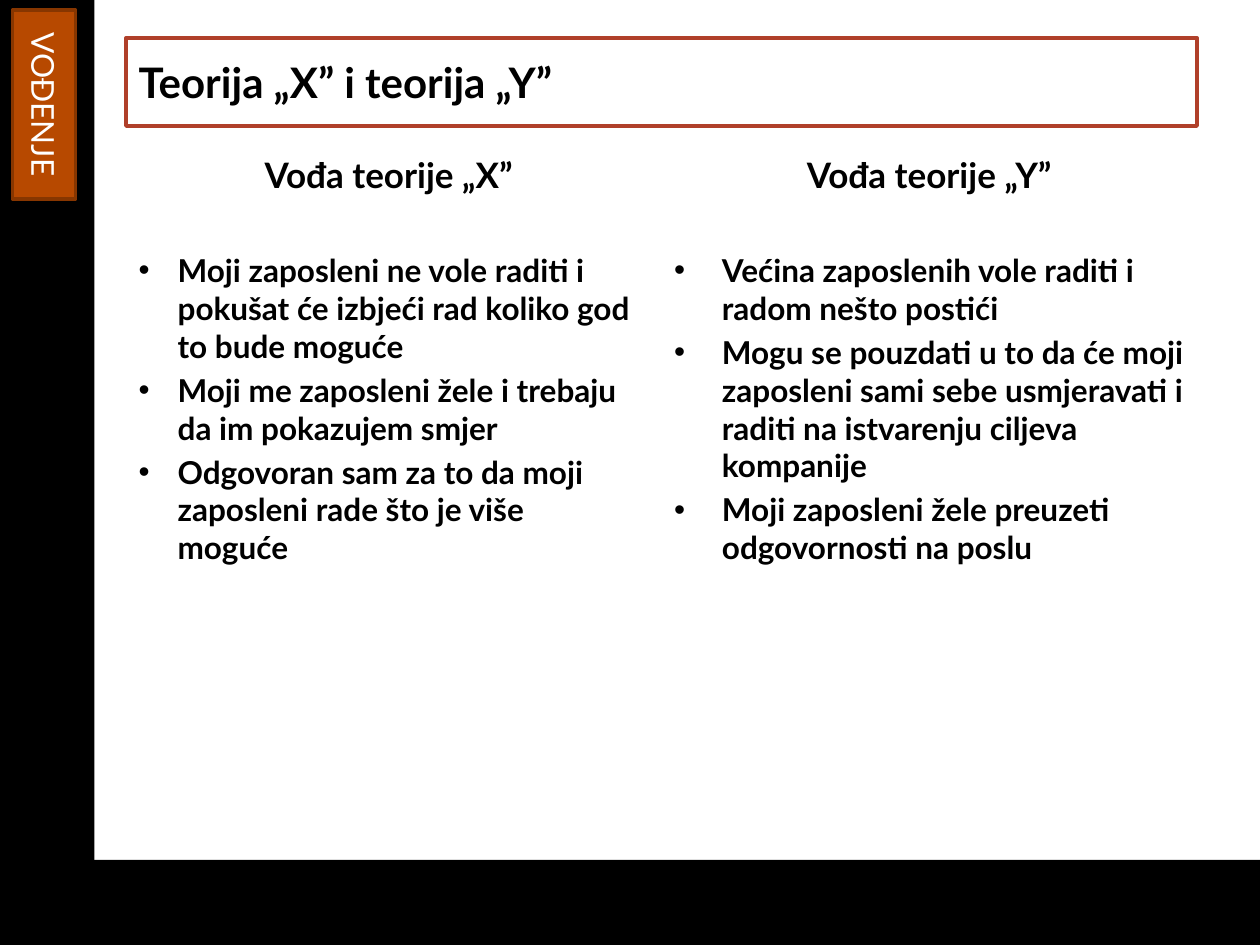
from dataclasses import dataclass
from pptx import Presentation, util as u
from pptx.dml.color import RGBColor as Rgb
from pptx.enum import shapes, text
from pptx.oxml.xmlchemy import OxmlElement


@dataclass(frozen=True)
class Theme:
    face: str = "Lato"
    ink: str = "000000"
    paper: str = "FFFFFF"
    edge: str = "B0402A"
    tab: str = "B74900"
    rim: str = "873600"
    title: int = 24
    head: int = 20
    body: int = 18


T = Theme()
W, H = 10, 7.5
SIDE, BASE = 0.075 * W, 0.91 * H
TOP, TALL = 0.156 * H, 0.66 * H
LEFT, RIGHT = 0.1 * W, 0.95 * W
MID = (LEFT + RIGHT) / 2

TITLE = "Teorija „X” i teorija „Y”"
TAB = "VOĐENJE"
COLS = [
    (LEFT, MID - 0.08, 0.31, "Vođa teorije „X”", [
        "Moji zaposleni ne vole raditi i pokušat će izbjeći rad koliko god to bude moguće",
        "Moji me zaposleni žele i trebaju da im pokazujem smjer",
        "Odgovoran sam za to da moji zaposleni rade što je više moguće",
    ]),
    (MID, RIGHT, 0.38, "Vođa teorije „Y”", [
        "Većina zaposlenih vole raditi i radom nešto postići",
        "Mogu se pouzdati u to da će moji zaposleni sami sebe usmjeravati i raditi na istvarenju ciljeva kompanije",
        "Moji zaposleni žele preuzeti odgovornosti na poslu",
    ]),
]
BARS = [(0, BASE, W, H - BASE), (0, 0, SIDE, BASE)]


def place(shape, *box):
    shape.left, shape.top, shape.width, shape.height = map(u.Inches, box)


def paint(shape, fill, line=None):
    shape.fill.solid()
    shape.fill.fore_color.rgb = Rgb.from_string(fill)
    if line:
        shape.line.color.rgb = Rgb.from_string(line)
        shape.line.width = u.Pt(2)
    else:
        shape.line.fill.background()


def style(para, size, color=T.ink, bold=True, align=text.PP_ALIGN.LEFT):
    para.alignment = align
    font = para.font
    font.name, font.size, font.bold = T.face, u.Pt(size), bold
    font.color.rgb = Rgb.from_string(color)


def mark(para, hang):
    props = para._p.get_or_add_pPr()
    props.set("marL", str(u.Inches(hang)))
    props.set("indent", str(-u.Inches(hang)))
    bullet = OxmlElement("a:buChar" if hang else "a:buNone")
    if hang:
        bullet.set("char", "•")
    props.append(bullet)


def block(slide, *box, fill, line=None):
    shape = slide.shapes.add_shape(shapes.MSO_SHAPE.RECTANGLE, *map(u.Inches, box))
    shape.shadow.inherit = False
    paint(shape, fill, line)
    return shape


def column(shape, left, right, hang, head, items):
    place(shape, left, TOP, right - left, TALL)
    frame = shape.text_frame
    frame.auto_size = text.MSO_AUTO_SIZE.NONE
    first = frame.paragraphs[0]
    first.text = head
    mark(first, 0)
    first.space_before = u.Pt(0)
    style(first, T.head, align=text.PP_ALIGN.CENTER)
    for n, item in enumerate(items):
        para = frame.add_paragraph()
        para.text = item
        mark(para, hang)
        para.space_before = u.Pt(3.6 if n else 31.6)
        style(para, T.body)


def main():
    deck = Presentation()
    deck.slide_width, deck.slide_height = u.Inches(W), u.Inches(H)
    slide = deck.slides.add_slide(deck.slide_layouts[3])

    for bar in BARS:
        block(slide, *bar, fill=T.ink)

    title, *bodies = slide.placeholders
    place(title, LEFT, 0.04 * H, RIGHT - LEFT, 0.7)
    paint(title, T.paper, T.edge)
    title.text = TITLE
    title.text_frame.auto_size = text.MSO_AUTO_SIZE.NONE
    title.text_frame.vertical_anchor = text.MSO_ANCHOR.MIDDLE
    style(title.text_frame.paragraphs[0], T.title)

    for body, col in zip(bodies, COLS):
        column(body, *col)

    tab = block(slide, 0.1, 0.08, 0.5, 0.2 * H, fill=T.tab, line=T.rim)
    tab.text_frame.text = TAB
    tab.text_frame.vertical_anchor = text.MSO_ANCHOR.MIDDLE
    tab.text_frame._txBody.bodyPr.set("vert", "vert")
    style(tab.text_frame.paragraphs[0], T.body, T.paper, False, text.PP_ALIGN.CENTER)

    deck.save("out.pptx")


if __name__ == "__main__":
    main()
